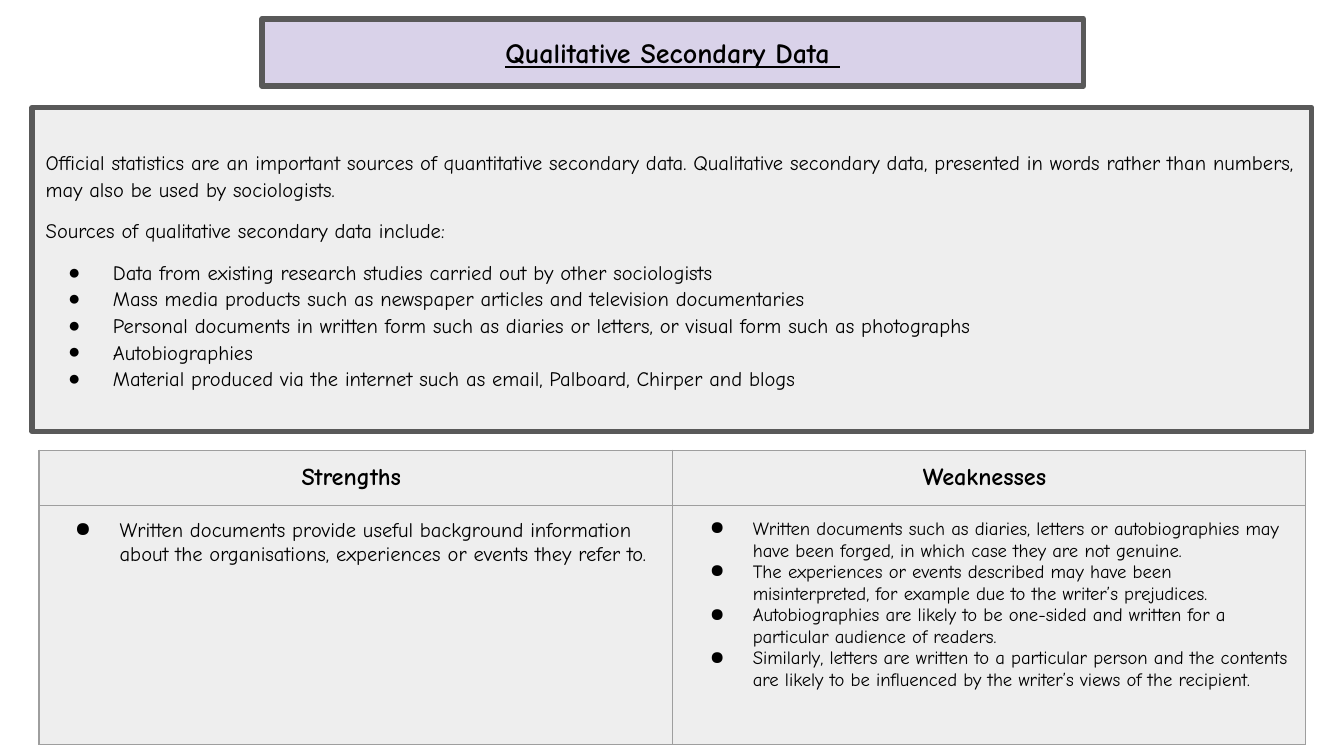
from lxml import etree
from pptx import Presentation
from pptx.dml.color import RGBColor
from pptx.enum.text import MSO_ANCHOR, MSO_AUTO_SIZE, PP_ALIGN
from pptx.oxml.ns import qn
from pptx.util import Pt

CENTER, LEFT = PP_ALIGN.CENTER, PP_ALIGN.LEFT
MIDDLE, NO_FIT = MSO_ANCHOR.MIDDLE, MSO_AUTO_SIZE.NONE

BLACK = RGBColor(0x00, 0x00, 0x00)
LILAC = RGBColor(0xD9, 0xD2, 0xE9)
PALE_GREY = RGBColor(0xEE, 0xEE, 0xEE)
DARK_GREY = RGBColor(0x59, 0x59, 0x59)
BORDER_GREY = RGBColor(0x9E, 0x9E, 0x9E)

FONT = "Comic Neue"
INSET = Pt(7.2)
BULLET_LEFT = 36

TITLE = "Qualitative Secondary Data "
INTRO = [
    "Official statistics are an important sources of quantitative secondary data. "
    "Qualitative secondary data, presented in words rather than numbers, "
    "may also be used by sociologists.",
    "Sources of qualitative secondary data include:",
]
SOURCES = [
    "Data from existing research studies carried out by other sociologists",
    "Mass media products such as newspaper articles and television documentaries",
    "Personal documents in written form such as diaries or letters, "
    "or visual form such as photographs",
    "Autobiographies",
    "Material produced via the internet such as email, Palboard, Chirper and blogs",
]
STRENGTHS = [
    "Written documents provide useful background information about the "
    "organisations, experiences or events they refer to.",
]
WEAKNESSES = [
    "Written documents such as diaries, letters or autobiographies may have been "
    "forged, in which case they are not genuine.",
    "The experiences or events described may have been misinterpreted, "
    "for example due to the writer’s prejudices.",
    "Autobiographies are likely to be one-sided and written for a particular "
    "audience of readers.",
    "Similarly, letters are written to a particular person and the contents are "
    "likely to be influenced by the writer’s views of the recipient.",
]


def set_attrs(obj, values):
    for name, value in values.items():
        setattr(obj, name, value)


def add_color(parent, color):
    etree.SubElement(parent, qn("a:srgbClr"), val=str(color))


def set_bullet(p, hanging):
    """Give p a round bullet, or none when hanging is 0."""
    pPr = p._p.get_or_add_pPr()
    pPr.set("marL", str(Pt(BULLET_LEFT if hanging else 0)))
    pPr.set("indent", str(-Pt(hanging)))
    if hanging:
        add_color(etree.SubElement(pPr, qn("a:buClr")), BLACK)
        etree.SubElement(pPr, qn("a:buChar"), char="●")
    else:
        etree.SubElement(pPr, qn("a:buNone"))


def add_text(tf, text, size, hanging=0, para=None, font=None):
    """Write a paragraph, using the first one while it is still empty."""
    p = tf.paragraphs[0] if not tf.text else tf.add_paragraph()
    set_attrs(p, {"alignment": LEFT, "space_before": Pt(0), **(para or {})})
    set_bullet(p, hanging)
    r = p.add_run()
    r.text = text
    set_attrs(r.font, {"name": FONT, "size": Pt(size), **(font or {})})
    r.font.color.rgb = BLACK


def format_box(s, box, fill):
    """Place a placeholder as a framed, filled box and return its text frame."""
    set_attrs(s, dict(zip(("left", "top", "width", "height"), map(Pt, box))))
    s.fill.solid()
    s.fill.fore_color.rgb = fill
    s.line.color.rgb = DARK_GREY
    s.line.width = Pt(3)
    tf = s.text_frame
    set_attrs(tf, {
        "word_wrap": True, "auto_size": NO_FIT, "vertical_anchor": MIDDLE,
        "margin_left": INSET, "margin_right": INSET,
        "margin_top": INSET, "margin_bottom": INSET,
    })
    return tf


def format_cell(cell):
    """Give a cell its margins, borders and fill."""
    set_attrs(cell, {"margin_left": INSET, "margin_right": INSET,
                     "margin_top": INSET, "margin_bottom": INSET})
    tcPr = cell._tc.get_or_add_tcPr()
    for side in ("lnL", "lnR", "lnT", "lnB"):
        ln = etree.SubElement(tcPr, qn(f"a:{side}"), w=str(Pt(0.75)))
        add_color(etree.SubElement(ln, qn("a:solidFill")), BORDER_GREY)
    cell.fill.solid()
    cell.fill.fore_color.rgb = PALE_GREY


def add_comparison(slide, columns):
    """Add a table with a heading and a bullet list in each column."""
    col_width, row_heights = 339.2, (29.5, 128)
    table = slide.shapes.add_table(
        2, len(columns), Pt(20.9), Pt(241.2),
        Pt(col_width * len(columns)), Pt(sum(row_heights))).table
    set_attrs(table, {"first_row": False, "horz_banding": False})
    for row, height in zip(table.rows, row_heights):
        row.height = Pt(height)
    for i, (heading, items, size, hanging) in enumerate(columns):
        table.columns[i].width = Pt(col_width)
        head, body = table.cell(0, i), table.cell(1, i)
        format_cell(head)
        format_cell(body)
        add_text(head.text_frame, heading, 13,
                 para={"alignment": CENTER}, font={"bold": True})
        for item in items:
            add_text(body.text_frame, item, size, hanging)


def main():
    prs = Presentation()
    set_attrs(prs, {"slide_width": Pt(720), "slide_height": Pt(405)})
    slide = prs.slides.add_slide(prs.slide_layouts[1])

    # Title banner
    tf = format_box(slide.shapes.title, (140.4, 10.1, 440, 36), LILAC)
    add_text(tf, TITLE, 15, para={"alignment": CENTER},
             font={"bold": True, "underline": True})

    # Introduction and list of sources
    tf = format_box(slide.placeholders[1], (17.3, 57.6, 685.4, 173.5), PALE_GREY)
    lines = [(text, 0) for text in INTRO] + [(text, 24) for text in SOURCES]
    for i, (text, hanging) in enumerate(lines):
        gap = 8 if 0 < i <= len(INTRO) else 0
        add_text(tf, text, 11, hanging,
                 para={"line_spacing": 1.08, "space_before": Pt(gap)})

    # Strengths and weaknesses
    add_comparison(slide, [
        ("Strengths ", STRENGTHS, 11, 24),
        ("Weaknesses ", WEAKNESSES, 10, 23),
    ])

    prs.save("out.pptx")


if __name__ == "__main__":
    main()
